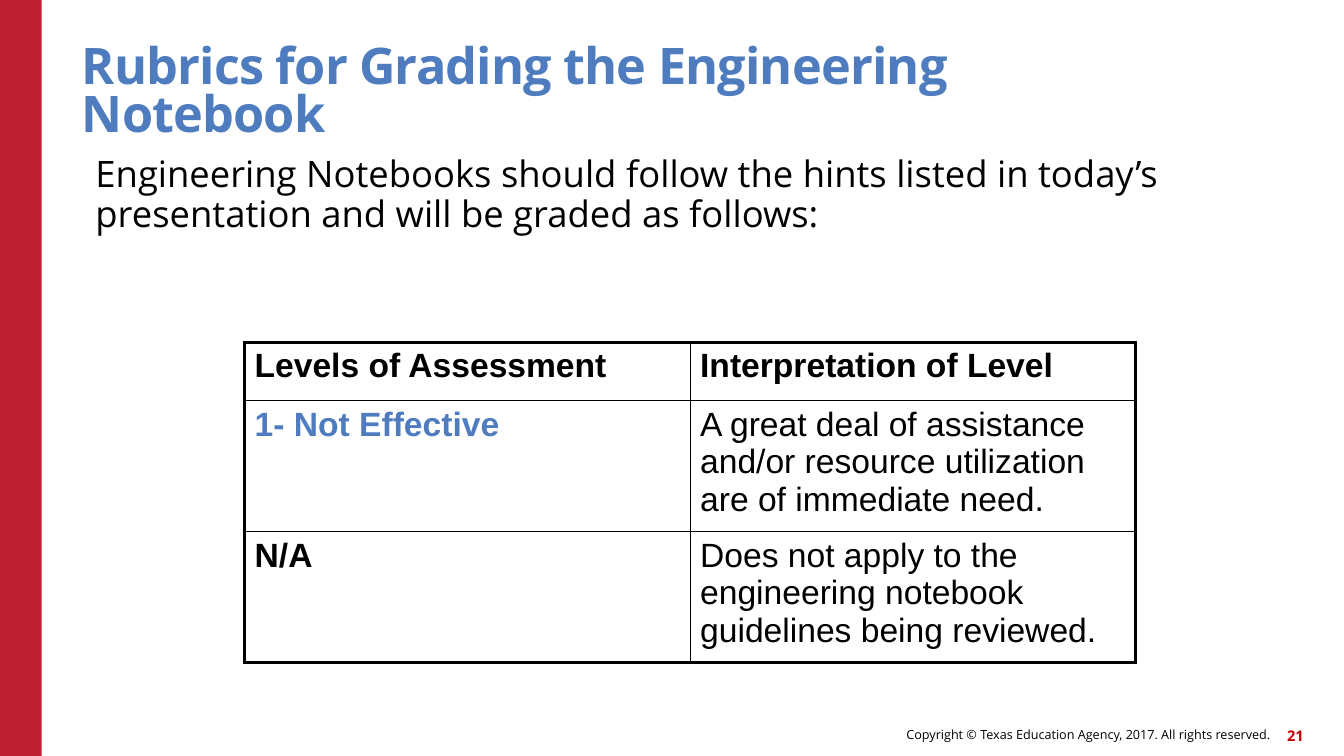
from lxml import etree
from pptx import Presentation
from pptx import util as u
from pptx.dml.color import RGBColor
from pptx.enum import shapes, text
from pptx.oxml.ns import qn

BLACK, WHITE, BLUE = "000000", "FFFFFF", "4E7CBE"
THIN, THICK = 1, 2.25


def color(value):
    return RGBColor.from_string(value)


class RubricSlide:
    """Holds the style and the slide; lengths are shares of the slide's size."""
    font = "Open Sans"
    table_font = "Arial"

    def __init__(self, prs):
        self.width, self.height = prs.slide_width, prs.slide_height
        self.slide = prs.slides.add_slide(prs.slide_layouts[6])

    def box(self, x, y, w, h):
        return (int(x * self.width), int(y * self.height),
                int(w * self.width), int(h * self.height))

    def format(self, p, size, fill, bold=False, font=None):
        for r in p.runs:
            r.font.name = font or self.font
            r.font.size = u.Pt(size)
            r.font.bold = bold
            r.font.color.rgb = color(fill)

    def band(self, x, y, w, h, fill):
        sp = self.slide.shapes.add_shape(shapes.MSO_SHAPE.RECTANGLE, *self.box(x, y, w, h))
        sp.shadow.inherit = False
        sp.fill.solid()
        sp.fill.fore_color.rgb = color(fill)
        sp.line.fill.background()

    def text(self, words, x, y, w, h, size, fill=BLACK, bold=False,
             align=text.PP_ALIGN.LEFT, anchor=text.MSO_ANCHOR.MIDDLE, spacing=1.0):
        tf = self.slide.shapes.add_textbox(*self.box(x, y, w, h)).text_frame
        tf.word_wrap = True
        tf.vertical_anchor = anchor
        tf.margin_left = tf.margin_right = tf.margin_top = tf.margin_bottom = 0
        p = tf.paragraphs[0]
        p.text = words
        p.alignment = align
        p.line_spacing = spacing
        self.format(p, size, fill, bold)
        return p

    def borders(self, cell, **widths):
        """Draws black cell borders; each keyword is a side, its value in points."""
        tc_pr = cell._tc.get_or_add_tcPr()
        for i, (side, width) in enumerate(widths.items()):
            ln = etree.Element(qn("a:ln" + side), w=str(u.Pt(width)))
            fill = etree.SubElement(ln, qn("a:solidFill"))
            etree.SubElement(fill, qn("a:srgbClr"), val=BLACK)
            tc_pr.insert(i, ln)

    def table(self, rows, x, y, w, heights, size):
        """Adds a table with a thick frame; a cell is (words, colour, bold)."""
        row_count, col_count = len(rows), len(rows[0])
        frame = self.slide.shapes.add_table(
            row_count, col_count, *self.box(x, y, w, sum(heights)))
        table = frame.table
        for row, height in zip(table.rows, heights):
            row.height = int(height * self.height)
        for i, row in enumerate(rows):
            for j, (words, fill, bold) in enumerate(row):
                cell = table.cell(i, j)
                cell.fill.solid()
                cell.fill.fore_color.rgb = color(WHITE)
                p = cell.text_frame.paragraphs[0]
                p.text = words
                self.format(p, size, fill, bold, self.table_font)
                self.borders(cell,
                             L=THIN if j else THICK,
                             R=THICK if j == col_count - 1 else THIN,
                             T=THIN if i else THICK,
                             B=THICK if i == row_count - 1 else THIN)


def main():
    prs = Presentation()
    prs.slide_width, prs.slide_height = u.Inches(13.33), u.Inches(7.5)
    s = RubricSlide(prs)
    right = text.PP_ALIGN.RIGHT

    s.band(0, 0, 0.031, 1, "C02033")
    s.text("Copyright © Texas Education Agency, 2017. All rights reserved.",
           0.46, 0.95, 0.485, 0.043, 9, align=right)
    s.text("21", 0.939, 0.951, 0.031, 0.043, 10.5, "C00000", True, align=right)

    title = s.text("Rubrics for Grading the Engineering Notebook",
                   0.061, 0.06, 0.825, 0.128, 36, BLUE, True,
                   anchor=text.MSO_ANCHOR.BOTTOM, spacing=0.79)
    title.runs[0].font._element.set("spc", "-60")
    s.text("Engineering Notebooks should follow the hints listed in today’s "
           "presentation and will be graded as follows:",
           0.071, 0.207, 0.897, 0.69, 26, anchor=text.MSO_ANCHOR.TOP, spacing=0.9)

    s.table([
        [("Levels of Assessment", BLACK, True),
         ("Interpretation of Level", BLACK, True)],
        [("1- Not Effective", BLUE, True),
         ("A great deal of assistance and/or resource utilization "
          "are of immediate need.", BLACK, False)],
        [("N/A", BLACK, True),
         ("Does not apply to the engineering notebook guidelines "
          "being reviewed.", BLACK, False)],
    ], 0.182, 0.453, 0.663, [0.077, 0.173, 0.173], 24)
    prs.save("out.pptx")


if __name__ == "__main__":
    main()
